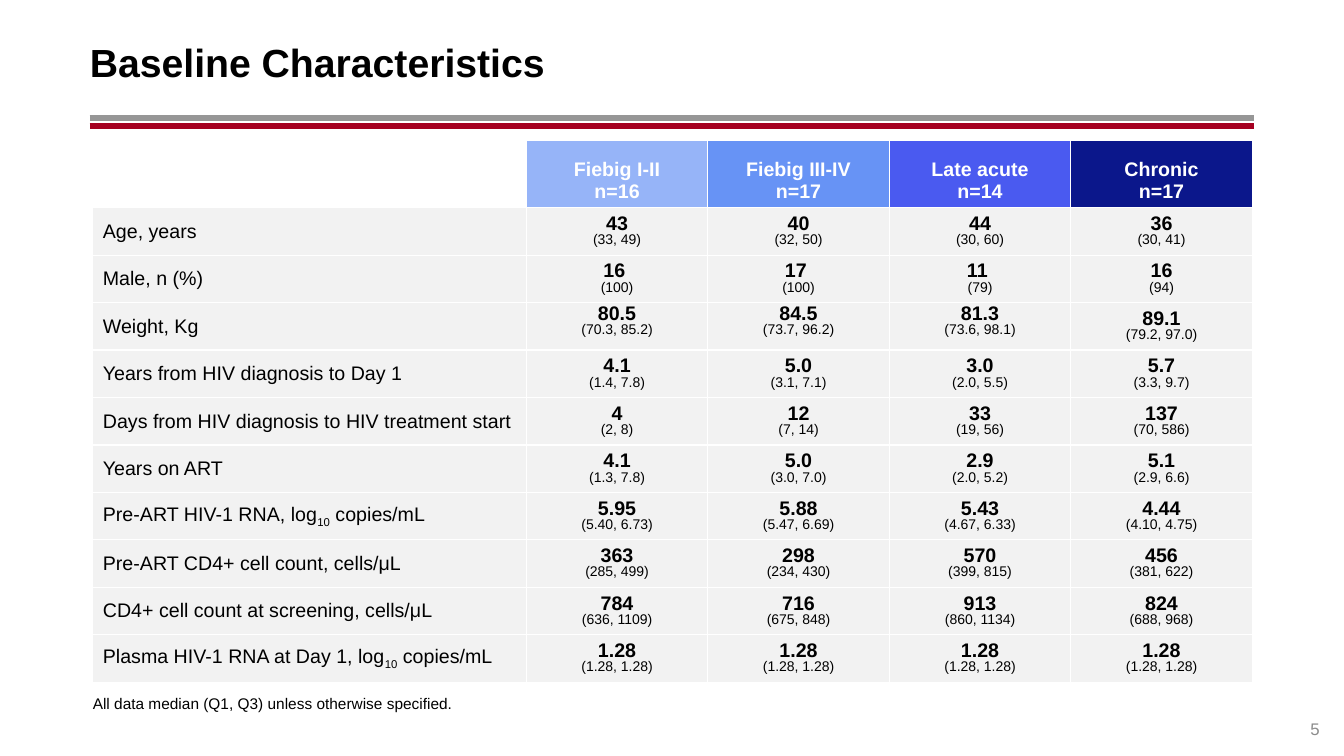
from lxml import etree
from pptx import Presentation
from pptx.dml.color import RGBColor
from pptx.enum.shapes import MSO_CONNECTOR
from pptx.enum.text import MSO_ANCHOR, MSO_AUTO_SIZE, PP_ALIGN
from pptx.oxml.ns import qn
from pptx.util import Inches, Pt

LEFT, CENTER, RIGHT = PP_ALIGN.LEFT, PP_ALIGN.CENTER, PP_ALIGN.RIGHT
TOP, MIDDLE, BOTTOM = MSO_ANCHOR.TOP, MSO_ANCHOR.MIDDLE, MSO_ANCHOR.BOTTOM
NO_AUTOFIT = MSO_AUTO_SIZE.NONE
STRAIGHT = MSO_CONNECTOR.STRAIGHT

SLIDE_WIDTH, SLIDE_HEIGHT = 13.33, 7.5
MARGIN, CONTENT_WIDTH = 0.89, 11.55
TABLE_LEFT, TABLE_TOP = 0.92, 1.39
LABEL_WIDTH, GROUP_WIDTH = 4.3, 1.8
HEADER_HEIGHT, ROW_HEIGHT = 0.67, 0.471

COLORS = {
    "text": "000000",
    "white": "FFFFFF",
    "row": "F2F2F2",
    "page": "8C8C8C",
    "gray_rule": "969696",
    "red_rule": "A50021",
    "Fiebig I-II": "96B4F8",
    "Fiebig III-IV": "6793F5",
    "Late acute": "4A5AF0",
    "Chronic": "0B178B",
}

GROUPS = [("Fiebig I-II", 16), ("Fiebig III-IV", 17), ("Late acute", 14), ("Chronic", 17)]

MEASURES = [
    ("Age, years", ["43|33, 49", "40|32, 50", "44|30, 60", "36|30, 41"]),
    ("Male, n (%)", ["16 |100", "17 |100", "11 |79", "16|94"]),
    ("Weight, Kg", ["80.5|70.3, 85.2", "84.5|73.7, 96.2", "81.3|73.6, 98.1", "89.1|79.2, 97.0"]),
    ("Years from HIV diagnosis to Day 1", ["4.1|1.4, 7.8", "5.0|3.1, 7.1", "3.0|2.0, 5.5", "5.7|3.3, 9.7"]),
    ("Days from HIV diagnosis to HIV treatment start", ["4|2, 8", "12|7, 14", "33|19, 56", "137|70, 586"]),
    ("Years on ART", ["4.1|1.3, 7.8", "5.0|3.0, 7.0", "2.9|2.0, 5.2", "5.1|2.9, 6.6"]),
    ("Pre-ART HIV-1 RNA, log_10_ copies/mL",
     ["5.95|5.40, 6.73", "5.88|5.47, 6.69", "5.43|4.67, 6.33", "4.44|4.10, 4.75"]),
    ("Pre-ART CD4+ cell count, cells/μL", ["363|285, 499", "298|234, 430", "570|399, 815", "456|381, 622"]),
    ("CD4+ cell count at screening, cells/μL",
     ["784|636, 1109", "716|675, 848", "913|860, 1134", "824|688, 968"]),
    ("Plasma HIV-1 RNA at Day 1, log_10_ copies/mL", ["1.28|1.28, 1.28"] * 4),
]


def write(paragraph, text, size=14, color="text", bold=False, align=LEFT, spacing=1.0):
    paragraph.alignment = align
    paragraph.line_spacing = spacing
    paragraph.space_before = Pt(0)
    for position, part in enumerate(text.split("_")):
        run = paragraph.add_run()
        run.text = part
        run.font.name = "Arial"
        run.font.size = Pt(size)
        run.font.bold = bold
        run.font.color.rgb = RGBColor.from_string(COLORS[color])
        if position % 2:
            run.font._element.set("baseline", "-25000")


def place(box, left, top, width, height, anchor, inset=0):
    box.left, box.top, box.width, box.height = map(Inches, (left, top, width, height))
    frame = box.text_frame
    frame.word_wrap = True
    frame.auto_size = NO_AUTOFIT
    frame.vertical_anchor = anchor
    frame.margin_left = frame.margin_right = 0
    frame.margin_top = frame.margin_bottom = Inches(inset)
    return frame.paragraphs[0]


def remove_bullet(paragraph):
    properties = paragraph._p.get_or_add_pPr()
    properties.set("marL", "0")
    properties.set("indent", "0")
    etree.SubElement(properties, qn("a:buNone"))


def add_rule(slide, top, color):
    rule = slide.shapes.add_connector(
        STRAIGHT, Inches(MARGIN), Inches(top), Inches(MARGIN + CONTENT_WIDTH), Inches(top))
    rule.line.color.rgb = RGBColor.from_string(COLORS[color])
    rule.line.width = Pt(4.25)
    etree.SubElement(rule._element.spPr, qn("a:effectLst"))


def outline(cell):
    properties = cell._tc.get_or_add_tcPr()
    for position, side in enumerate(("lnL", "lnR", "lnT", "lnB")):
        border = etree.Element(qn(f"a:{side}"), w=str(Pt(1)))
        fill = etree.SubElement(border, qn("a:solidFill"))
        etree.SubElement(fill, qn("a:srgbClr"), val=COLORS["white"])
        properties.insert(position, border)


def format_cell(cell, color, anchor, inset=0.03):
    cell.fill.solid()
    cell.fill.fore_color.rgb = RGBColor.from_string(COLORS[color])
    cell.vertical_anchor = anchor
    cell.margin_left = cell.margin_right = Inches(0.1)
    cell.margin_top = cell.margin_bottom = Inches(inset)
    outline(cell)
    return cell.text_frame


def add_header(table):
    corner = table.cell(0, 0)
    corner.fill.background()
    outline(corner)
    for column, (group, count) in enumerate(GROUPS, 1):
        frame = format_cell(table.cell(0, column), group, BOTTOM, inset=0.05)
        heading = {"color": "white", "bold": True, "align": CENTER}
        write(frame.paragraphs[0], group, **heading)
        write(frame.add_paragraph(), f"n={count}", **heading)


def add_measure(table, row, label, results):
    write(format_cell(table.cell(row, 0), "row", MIDDLE).paragraphs[0], label)
    for column, result in enumerate(results, 1):
        raised = label == "Weight, Kg" and column < len(results)
        frame = format_cell(table.cell(row, column), "row", TOP if raised else MIDDLE)
        value, spread = result.split("|")
        write(frame.paragraphs[0], value, bold=True, align=CENTER, spacing=0.85)
        write(frame.add_paragraph(), f"({spread})", size=10, align=CENTER, spacing=0.85)


def add_characteristics(slide):
    width = LABEL_WIDTH + GROUP_WIDTH * len(GROUPS)
    height = HEADER_HEIGHT + ROW_HEIGHT * len(MEASURES)
    table = slide.shapes.add_table(
        len(MEASURES) + 1, len(GROUPS) + 1,
        Inches(TABLE_LEFT), Inches(TABLE_TOP), Inches(width), Inches(height)).table
    table.first_row = table.horz_banding = False
    for index, column in enumerate(table.columns):
        column.width = Inches(GROUP_WIDTH if index else LABEL_WIDTH)
    for index, row in enumerate(table.rows):
        row.height = Inches(ROW_HEIGHT if index else HEADER_HEIGHT)
    add_header(table)
    for row, (label, results) in enumerate(MEASURES, 1):
        add_measure(table, row, label, results)


def main():
    deck = Presentation()
    deck.slide_width, deck.slide_height = Inches(SLIDE_WIDTH), Inches(SLIDE_HEIGHT)
    slide = deck.slides.add_slide(deck.slide_layouts[1])
    title, footnote = slide.placeholders
    add_rule(slide, 1.17, "gray_rule")
    add_rule(slide, 1.25, "red_rule")
    heading = place(title, MARGIN, 0.18, CONTENT_WIDTH, 0.86, MIDDLE, inset=0.05)
    write(heading, "Baseline Characteristics", size=28, bold=True)
    note = place(footnote, TABLE_LEFT, 6.88, CONTENT_WIDTH, 0.19, BOTTOM)
    write(note, "All data median (Q1, Q3) unless otherwise specified.", size=11)
    remove_bullet(note)
    page_number = slide.shapes.add_textbox(0, 0, 0, 0)
    page = place(page_number, MARGIN + CONTENT_WIDTH, 6.93, 0.65, 0.4, BOTTOM)
    write(page, "5", size=12, color="page", align=RIGHT)
    add_characteristics(slide)
    deck.save("out.pptx")


if __name__ == "__main__":
    main()
